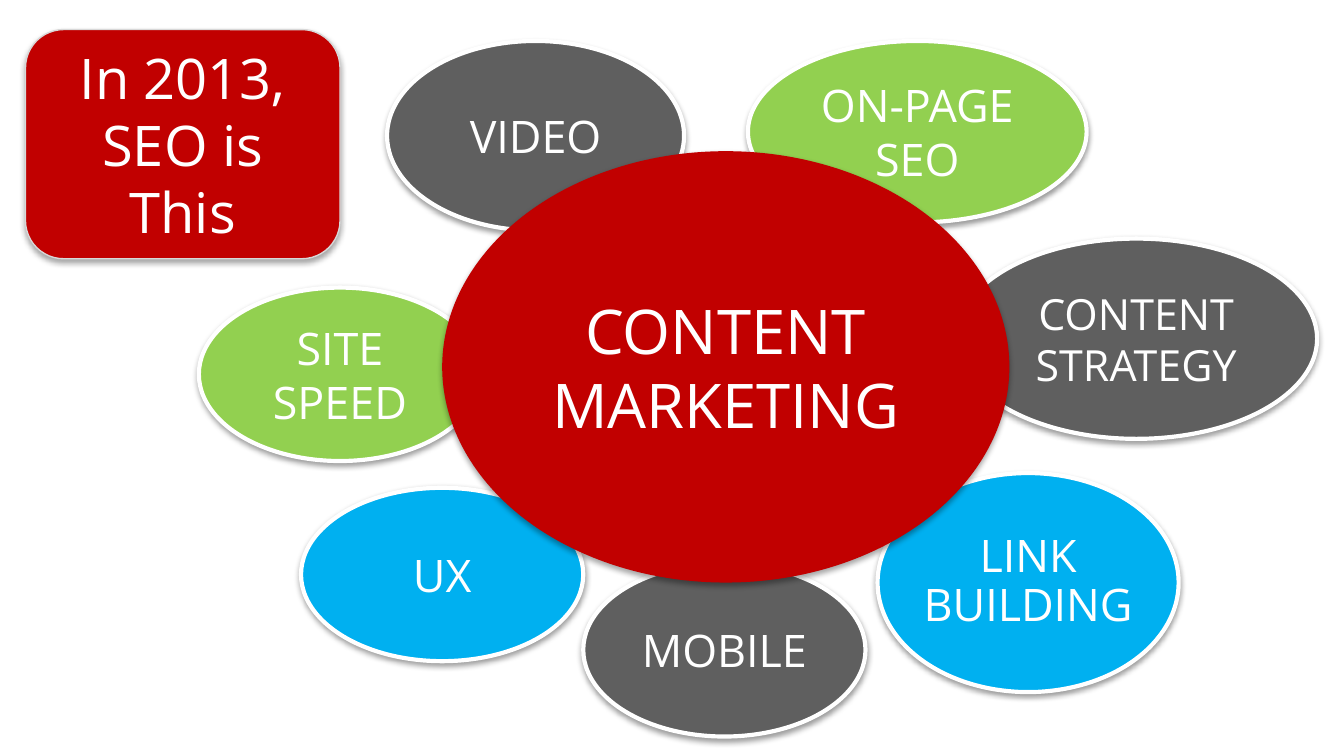
from lxml.etree import SubElement as Sub
from pptx import Presentation
from pptx.dml.color import RGBColor as RGB
from pptx.enum.shapes import MSO_SHAPE as Form
from pptx.enum.text import MSO_ANCHOR as Anchor, PP_ALIGN as Align
from pptx.oxml.ns import qn
from pptx.util import Pt

PX = 4572
FONT = "Open Sans"
WHITE = RGB(0xFF, 0xFF, 0xFF)
BLUE = RGB(0x00, 0xB0, 0xF0)
GRAY = RGB(0x5F, 0x5F, 0x5F)
GREEN = RGB(0x92, 0xD0, 0x50)
RED = RGB(0xC1, 0x00, 0x00)
EDGE = RGB(0xD8, 0xD8, 0xD8)

TOPICS = [
    ("UX", (448, 726, 420, 258), BLUE, 24),
    ("CONTENT STRATEGY", (1422, 355, 538, 298), GRAY, 23),
    ("MOBILE", (868, 838, 420, 258), GRAY, 24),
    ("SITE SPEED", (296, 428, 420, 258), GREEN, 24),
    ("VIDEO", (576, 61, 442, 282), GRAY, 24),
    ("ON-PAGE SEO", (1113, 61, 504, 270), GREEN, 24),
]


def cast(shape, alpha, drop):
    """Give the shape a soft black shadow straight below it."""
    shape.shadow.inherit = False
    effects = shape._element.spPr.find(qn("a:effectLst"))
    outer = Sub(effects, qn("a:outerShdw"), blurRad=str(Pt(3.1)),
                dist=str(Pt(drop)), dir="5400000", rotWithShape="0")
    black = Sub(outer, qn("a:srgbClr"), val="000000")
    Sub(black, qn("a:alpha"), val=str(alpha * 1000))


def write(shape, text, size):
    """Centre white text in the shape and return its paragraph."""
    frame = shape.text_frame
    frame.word_wrap = True
    frame.vertical_anchor = Anchor.MIDDLE
    para = frame.paragraphs[0]
    para.text = text
    para.alignment = Align.CENTER
    para.font.name = FONT
    para.font.size = Pt(size)
    para.font.color.rgb = WHITE
    return para


def block(slide, form, box, fill, edge=None, width=0):
    """Add a filled shape, with an outline if an edge colour is given."""
    shape = slide.shapes.add_shape(form, *(n * PX for n in box))
    shape.fill.solid()
    shape.fill.fore_color.rgb = fill
    if edge is None:
        shape.line.fill.background()
    else:
        shape.line.color.rgb = edge
        shape.line.width = Pt(width)
    return shape


def topic(slide, text, box, fill, size):
    """Add a white-edged oval for one topic."""
    oval = block(slide, Form.OVAL, box, fill, WHITE, 2.25)
    cast(oval, 38, 1.6)
    return oval, write(oval, text, size)


def link(slide):
    """Add the link building oval with tight lines and no insets."""
    oval, para = topic(slide, "LINK BUILDING", (1306, 704, 448, 326), BLUE, 24)
    para.line_spacing = 0.9
    frame = oval.text_frame
    frame.margin_left = frame.margin_right = 0
    frame.margin_top = frame.margin_bottom = 0


def core(slide):
    """Add the large central oval."""
    oval = block(slide, Form.OVAL, (658, 225, 844, 642), RED)
    cast(oval, 35, 1.8)
    write(oval, "CONTENT MARKETING", 33)


def title(slide):
    """Add the rounded title box."""
    box = block(slide, Form.ROUNDED_RECTANGLE, (38, 44, 468, 341), RED, EDGE, 0.75)
    cast(box, 35, 1.8)
    write(box, "In 2013, SEO is This", 30)


def main():
    """Build and save the slide."""
    deck = Presentation()
    deck.slide_width = 2000 * PX
    deck.slide_height = 1125 * PX
    slide = deck.slides.add_slide(deck.slide_layouts[6])
    link(slide)
    for item in TOPICS:
        topic(slide, *item)
    core(slide)
    title(slide)
    deck.save("out.pptx")


if __name__ == "__main__":
    main()
